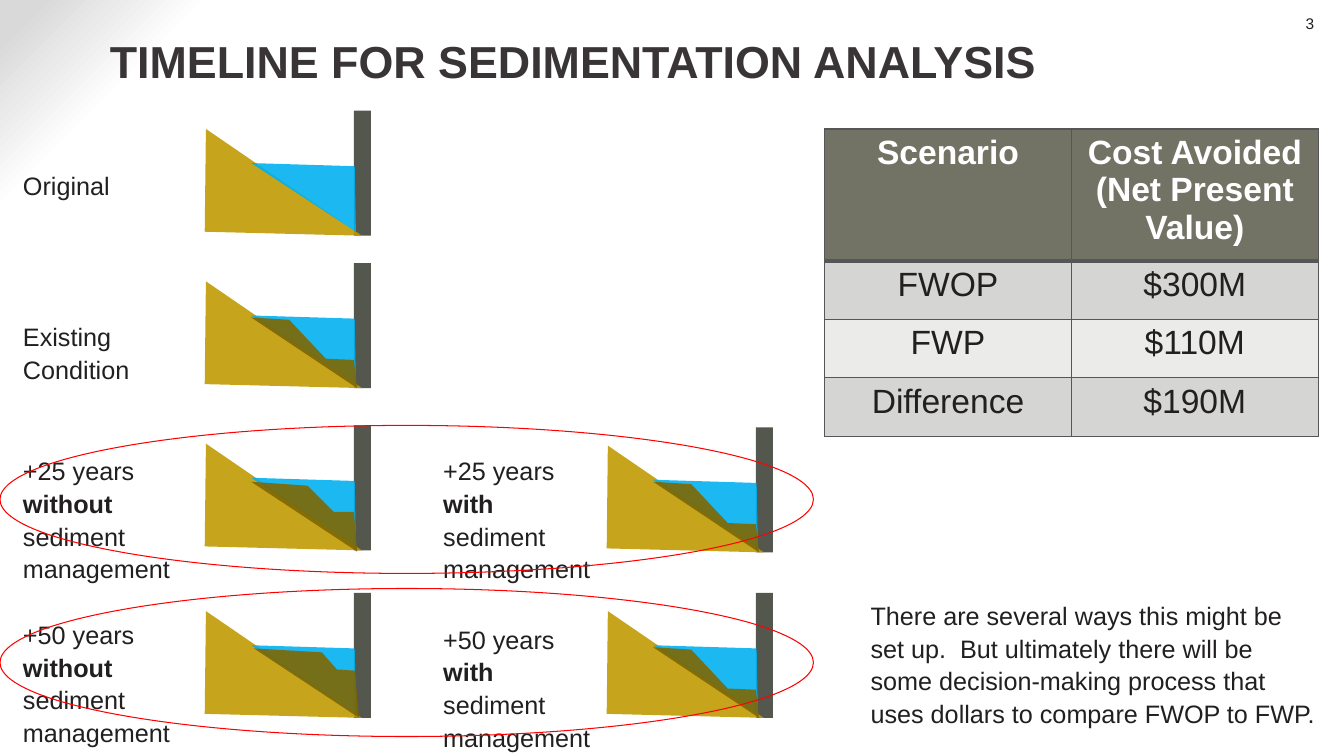
from pptx import Presentation
from pptx.dml.color import RGBColor
from pptx.enum.shapes import MSO_SHAPE
from pptx.enum.text import MSO_ANCHOR, PP_ALIGN
from pptx.oxml import parse_xml
from pptx.oxml.ns import nsdecls, qn
from pptx.util import Cm, Pt

INK = RGBColor(0x22, 0x1F, 0x20)
TITLE = RGBColor(0x39, 0x34, 0x36)
WHITE = RGBColor(0xFF, 0xFF, 0xFF)
RED = RGBColor(0xFF, 0x00, 0x00)
DAM = RGBColor(0x3F, 0x43, 0x39)
HILL = RGBColor(0xC0, 0x99, 0x00)
WATER = RGBColor(0x00, 0xB0, 0xF0)
MUD = RGBColor(0x80, 0x66, 0x00)
HEAD = RGBColor(0x72, 0x73, 0x65)
DARK = RGBColor(0xD5, 0xD5, 0xD3)
PALE = RGBColor(0xEB, 0xEB, 0xEA)
EDGE = RGBColor(0x56, 0x55, 0x57)

deck = Presentation()
deck.slide_width, deck.slide_height = Cm(33.87), Cm(19.05)
slide = deck.slides.add_slide(deck.slide_layouts[6])
shapes = slide.shapes

# Background: white with a grey glow in the top left corner
stops = "".join(
    f'<a:gs pos="{pos}000"><a:srgbClr val="{tone}"/></a:gs>'
    for pos, tone in [(87, "FFFFFF"), (90, "FFFFFF"), (98, "D9D9D9")])
slide.element.cSld.insert(0, parse_xml(
    f'<p:bg {nsdecls("p", "a")}><p:bgPr><a:gradFill rotWithShape="1">'
    f'<a:gsLst>{stops}</a:gsLst><a:path path="circle">'
    '<a:fillToRect l="100000" t="100000"/></a:path></a:gradFill>'
    '<a:effectLst/></p:bgPr></p:bg>'))


def add_text(left, top, width, height, parts, size=18, color=INK):
    """Add a wrapped box; every second part is set in bold."""
    box = shapes.add_textbox(Cm(left), Cm(top), Cm(width), Cm(height))
    frame = box.text_frame
    frame.word_wrap = True
    para = frame.paragraphs[0]
    for i, part in enumerate(parts):
        run = para.add_run()
        run.text = part
        run.font.name = "Arial"
        run.font.size = Pt(size)
        run.font.bold = i % 2 == 1
        run.font.color.rgb = color
    return frame


def paint(shape, color):
    """Fill a shape at 89% opacity, without outline or shadow."""
    shape.shadow.inherit = False
    shape.line.fill.background()
    shape.fill.solid()
    shape.fill.fore_color.rgb = color
    tone = shape._element.spPr.find(".//" + qn("a:srgbClr"))
    tone.append(parse_xml(f'<a:alpha {nsdecls("a")} val="89000"/>'))


# Slide number and title
number = add_text(31.6, 0.36, 1.52, 0.48, ["3"], 11)
number.margin_top = number.margin_bottom = number.margin_right = 0
number.paragraphs[0].alignment = PP_ALIGN.RIGHT

title = add_text(2.64, 0.36, 28.85, 2.31,
                 ["TIMELINE FOR SEDIMENTATION ANALYSIS"], 32, TITLE)
title.margin_left = Cm(0.13)
title.margin_top = title.margin_bottom = title.margin_right = 0
title.vertical_anchor = MSO_ANCHOR.MIDDLE
title.paragraphs[0].runs[0].font.bold = True

# Reservoir sections, outlines relative to the top left of each section
hill = [(3.96, 3.15), (0.03, 0.46), (0, 3.05)]
water = [(3.78, 1.4), (1.17, 1.32), (3.81, 3.05)]
low = [(1.17, 1.37), (2.13, 1.43), (3.05, 2.41), (3.76, 2.44), (3.84, 3.15)]
mid = [(1.17, 1.42), (2.59, 1.52), (3.25, 2.18), (3.76, 2.18), (3.84, 3.18)]
high = [(1.24, 1.4), (2.95, 1.5), (3.33, 1.93), (3.78, 1.96), (3.89, 3.15)]

for left, top, mud in [
        (5.16, 2.79, None), (5.16, 6.63, low), (5.16, 10.72, mid),
        (5.16, 14.94, high), (15.29, 10.77, low), (15.29, 14.94, low)]:
    dam = shapes.add_shape(MSO_SHAPE.RECTANGLE, Cm(left + 3.76), Cm(top),
                           Cm(0.43), Cm(3.15))
    paint(dam, DAM)
    for points, color in [(hill, HILL), (water, WATER), (mud, MUD)]:
        if points:
            spots = [(Cm(left + x), Cm(top + y)) for x, y in points]
            pen = shapes.build_freeform(*spots[0])
            pen.add_line_segments(spots[1:], close=True)
            paint(pen.convert_to_shape(), color)

# Labels and closing note
rest = " sediment management"
for left, top, width, height, parts in [
        (0.33, 4.11, 3.96, 1.02, ["Original"]),
        (0.33, 7.92, 3.96, 1.8, ["Existing Condition"]),
        (0.33, 11.3, 4.62, 3.33, ["+25 years ", "without", rest]),
        (0.33, 15.42, 4.62, 3.33, ["+50 years ", "without", rest]),
        (10.92, 11.3, 4.62, 3.33, ["+25 years ", "with", " " + rest]),
        (10.92, 15.54, 4.62, 3.33, ["+50 years ", "with", " " + rest]),
        (21.69, 14.94, 11.84, 3.33, [
            "There are several ways this might be set up.  But ultimately "
            "there will be some decision-making process that uses dollars "
            "to compare FWOP to FWP."])]:
    label = add_text(left, top, width, height, parts)
    label.paragraphs[0].line_spacing = 1.08

# Cost table
rows = [("Scenario", "Cost Avoided (Net Present Value)"),
        ("FWOP", "$300M"), ("FWP", "$110M"), ("Difference", "$190M")]
fills = [HEAD, DARK, PALE, DARK]
table = shapes.add_table(4, 2, Cm(20.78), Cm(3.25), Cm(12.44), Cm(7.74)).table
for col in table.columns:
    col.width = Cm(6.22)
for r, row in enumerate(rows):
    table.rows[r].height = Cm(1.47 if r else 3.33)
    for c, word in enumerate(row):
        cell = table.cell(r, c)
        cell.text = word
        para = cell.text_frame.paragraphs[0]
        para.alignment = PP_ALIGN.CENTER
        font = para.runs[0].font
        font.name, font.size, font.bold = "Arial", Pt(24), r == 0
        font.color.rgb = INK if r else WHITE
        props = cell._tc.get_or_add_tcPr()
        for side in "LRTB":
            thick = (r, side) in [(0, "B"), (1, "T")]
            props.append(parse_xml(
                f'<a:ln{side} {nsdecls("a")} w="{Pt(3 if thick else 1)}">'
                f'<a:solidFill><a:srgbClr val="{EDGE}"/></a:solidFill>'
                f'</a:ln{side}>'))
        cell.fill.solid()
        cell.fill.fore_color.rgb = fills[r]

# Rings around each pair to compare
for top in (10.72, 14.83):
    ring = shapes.add_shape(MSO_SHAPE.OVAL, 0, Cm(top), Cm(20.5), Cm(3.73))
    ring.shadow.inherit = False
    ring.fill.background()
    ring.line.color.rgb = RED
    ring.line.width = Pt(0.75)

deck.save("out.pptx")
